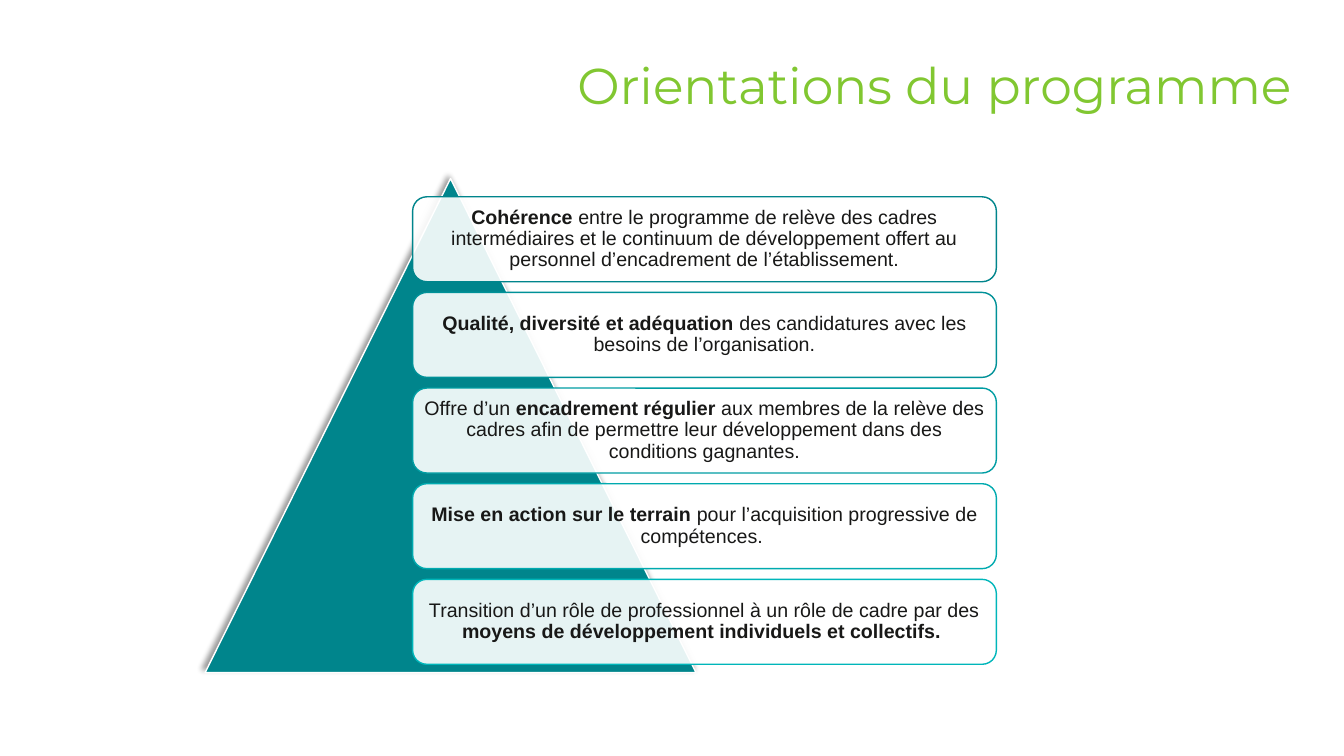
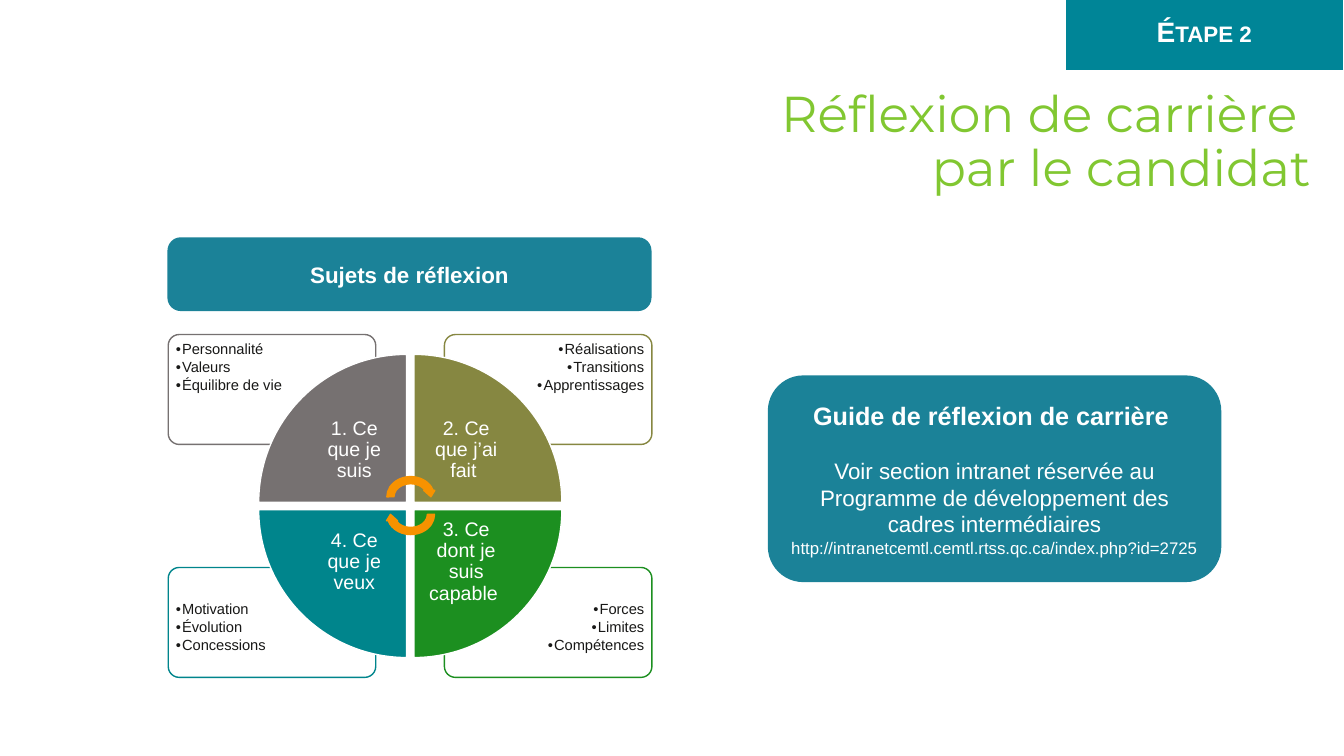
from dataclasses import dataclass

from lxml import etree
from pptx import Presentation
from pptx import util as u
from pptx.dml.color import RGBColor
from pptx.enum import shapes, text
from pptx.oxml import ns

Cm, Pt = u.Cm, u.Pt
SHAPE, ALIGN, ANCHOR = shapes.MSO_SHAPE, text.PP_ALIGN, text.MSO_ANCHOR


# Colours and type sizes
@dataclass(frozen=True)
class Theme:
    title_font: str = "Montserrat"
    body_font: str = "Arial"
    green: str = "81C731"
    ink: str = "181817"
    white: str = "FFFFFF"
    teal: str = "00858C"
    panel: str = "1B8298"
    band: str = "008597"
    grey: str = "767171"
    olive: str = "868741"
    leaf: str = "1C8F20"
    orange: str = "F79200"
    outlines: tuple = ("00858C", "009198", "009DA3", "00AAAF", "00B6BA")
    title_size: float = 36
    band_size: float = 20
    heading_size: float = 18
    panel_size: float = 16
    body_size: float = 14
    link_size: float = 12
    list_size: float = 10.5
    tight: float = 0.9


THEME = Theme()

ORIENTATIONS = (
    "**Cohérence** entre le programme de relève des cadres intermédiaires et le "
    "continuum de développement offert au personnel d’encadrement de l’établissement.",
    "**Qualité, diversité et adéquation **des candidatures avec les besoins de "
    "l’organisation.",
    "Offre d’un **encadrement régulier **aux membres de la relève des cadres afin de "
    "permettre leur développement dans des conditions gagnantes.",
    "**Mise en action sur le terrain **pour l’acquisition progressive de compétences. ",
    "Transition d’un rôle de professionnel à un rôle de cadre par des "
    "**moyens de développement individuels et collectifs. **",
)

# Column, row, rotation, colour, label, list items
QUADRANTS = (
    (0, 0, 0, THEME.grey, "1. Ce que je suis",
     ("Personnalité", "Valeurs", "Équilibre de vie")),
    (1, 0, 90, THEME.olive, "2. Ce que j’ai fait ",
     ("Réalisations", "Transitions", "Apprentissages")),
    (1, 1, 180, THEME.leaf, "3. Ce dont je suis capable ",
     ("Forces", "Limites", "Compétences")),
    (0, 1, 270, THEME.teal, "4. Ce que je veux",
     ("Motivation", "Évolution", "Concessions")),
)


# XML helpers
def add_xml(parent, tag, **attributes):
    return etree.SubElement(parent, ns.qn(tag), {k: str(v) for k, v in attributes.items()})


def set_alpha(shape, percent):
    colour = shape.fill._xPr.find(ns.qn("a:solidFill"))[0]
    add_xml(colour, "a:alpha", val=percent * 1000)


def add_shadow(shape):
    effects = shape._element.spPr.find(ns.qn("a:effectLst"))
    shadow = add_xml(effects, "a:outerShdw", blurRad=Pt(4), dist=Pt(3),
                     dir=225 * 60000, rotWithShape=0)
    colour = add_xml(shadow, "a:srgbClr", val="000000")
    add_xml(colour, "a:alpha", val=40000)


def add_bullet(para):
    properties = para._p.get_or_add_pPr()
    properties.set("marL", str(Cm(0.16)))
    properties.set("indent", str(-Cm(0.16)))
    add_xml(properties, "a:buFont", typeface=THEME.body_font)
    add_xml(properties, "a:buChar", char="•")


# Text
def write(para, markup, size, colour=THEME.white, bold=False, align=ALIGN.CENTER,
          spacing=None, before=None, after=None, bullet=False, small_caps=False):
    """Write a paragraph; ** toggles bold."""
    if bullet:
        add_bullet(para)
    para.alignment = align
    para.line_spacing = spacing
    para.space_before = before
    para.space_after = after
    for index, part in enumerate(markup.split("**")):
        if not part:
            continue
        span = para.add_run()
        span.text = part
        span.font.name = THEME.body_font
        span.font.size = Pt(size)
        span.font.bold = bold or index % 2 == 1
        span.font.color.rgb = RGBColor.from_string(colour)
        if small_caps:
            span._r.get_or_add_rPr().set("cap", "small")


def prepare_frame(box, inset=None, anchor=ANCHOR.MIDDLE):
    frame = box.text_frame
    frame.word_wrap = True
    frame.vertical_anchor = anchor
    if inset is not None:
        frame.margin_left = frame.margin_right = Cm(inset)
        frame.margin_top = frame.margin_bottom = Cm(inset)
    return frame


def next_paragraph(frame, index):
    return frame.add_paragraph() if index else frame.paragraphs[0]


# Elements
def add_shape(page, kind, area, fill, line, width=1, rotation=0):
    shape = page.shapes.add_shape(kind, *map(Cm, area))
    shape.shadow.inherit = False
    shape.fill.solid()
    shape.fill.fore_color.rgb = RGBColor.from_string(fill)
    shape.line.color.rgb = RGBColor.from_string(line)
    shape.line.width = Pt(width)
    shape.rotation = rotation
    return shape


def add_card(page, area, line):
    card = add_shape(page, SHAPE.ROUNDED_RECTANGLE, area, THEME.white, line)
    set_alpha(card, 90)
    return card


def add_panel(page, area):
    panel = add_shape(page, SHAPE.ROUNDED_RECTANGLE, area, THEME.panel, THEME.panel, 2.25)
    return prepare_frame(panel)


def add_list_card(page, area, line, items, align, top_inset):
    card = add_card(page, area, line)
    card.adjustments[0] = 0.1
    frame = prepare_frame(card, 0.11, ANCHOR.TOP)
    frame.margin_top = Cm(top_inset)
    for index, item in enumerate(items):
        write(next_paragraph(frame, index), item, THEME.list_size, THEME.ink,
              align=align, spacing=THEME.tight, after=Pt(1.6), bullet=True)


def add_band(page, label):
    band = add_shape(page, SHAPE.RECTANGLE, (26.83, -0.08, 7.04, 1.87),
                     THEME.band, THEME.white, 1.5)
    write(prepare_frame(band, 0.3).paragraphs[0], label, THEME.band_size, bold=True,
          spacing=THEME.tight, small_caps=True)


# Shared title style and pages
def style_titles(deck):
    level = deck.slide_master.element.xpath("p:txStyles/p:titleStyle/a:lvl1pPr")[0]
    level.set("algn", "r")
    for old in level.findall(ns.qn("a:lnSpc")):
        level.remove(old)
    spacing = add_xml(level, "a:lnSpc")
    add_xml(spacing, "a:spcPct", val=int(THEME.tight * 100000))
    level.insert(0, spacing)
    style = level.find(ns.qn("a:defRPr"))
    style.set("sz", str(THEME.title_size * 100))
    for child in list(style):
        style.remove(child)
    add_xml(add_xml(style, "a:solidFill"), "a:srgbClr", val=THEME.green)
    add_xml(style, "a:latin", typeface=THEME.title_font)


def add_page(deck, title, area):
    page = deck.slides.add_slide(deck.slide_layouts.get_by_name("Title Only"))
    box = page.shapes.title
    box.left, box.top, box.width, box.height = map(Cm, area)
    frame = prepare_frame(box)
    frame.auto_size = text.MSO_AUTO_SIZE.NONE
    frame.paragraphs[0].text = title
    return page


def build_orientations(deck):
    page = add_page(deck, "Orientations du programme", (6.18, 1, 26.62, 2.44))
    pyramid = add_shape(page, SHAPE.ISOSCELES_TRIANGLE, (5.17, 4.5, 12.37, 12.45),
                        THEME.teal, THEME.white)
    add_shadow(pyramid)
    for row, (markup, line) in enumerate(zip(ORIENTATIONS, THEME.outlines)):
        card = add_card(page, (10.4, 4.96 + 2.41 * row, 14.71, 2.14), line)
        write(prepare_frame(card, 0.15).paragraphs[0], markup, THEME.body_size,
              THEME.ink, spacing=THEME.tight)


def add_wheel(page):
    # Corner cards lie behind the wheel
    for column, row, _, colour, _, items in QUADRANTS:
        area = (4.24 + 6.96 * column, 8.43 + 5.87 * row, 5.23, 2.77)
        add_list_card(page, area, colour, items,
                      ALIGN.RIGHT if column else ALIGN.LEFT, 0.79 if row else 0.11)

    # Quarters, each with its label against the hub
    wedge, label_size, pitch = 3.73, 2.64, 3.91
    for column, row, rotation, colour, label, _ in QUADRANTS:
        left, top = 6.52 + pitch * column, 8.93 + pitch * row
        add_shape(page, SHAPE.PIE_WEDGE, (left, top, wedge, wedge), colour,
                  THEME.white, rotation=rotation)
        shift = wedge - label_size
        area = (left + shift * (1 - column), top + shift * (1 - row),
                label_size, label_size)
        box = page.shapes.add_textbox(*map(Cm, area))
        write(prepare_frame(box, 0.28).paragraphs[0], label, THEME.body_size,
              spacing=THEME.tight)

    # Turning arrows
    for top, rotation in ((11.96, 0), (12.4, 180)):
        arrow = add_shape(page, SHAPE.CIRCULAR_ARROW, (9.7, top, 1.3, 1.12),
                          THEME.orange, THEME.orange, rotation=rotation)
        arrow.adjustments[0] = 0.16


def build_reflection(deck):
    page = add_page(deck, "Réflexion de carrière \vpar le candidat",
                    (5.29, 1.77, 27.99, 3.68))
    add_wheel(page)

    # Guide panel
    guide = add_panel(page, (19.39, 9.5, 11.35, 5.13))
    write(guide.paragraphs[0], "Guide de réflexion de carrière ", THEME.heading_size,
          bold=True)
    write(guide.add_paragraph(), "Voir section intranet réservée au Programme de "
          "développement des cadres intermédiaires", THEME.panel_size, before=Pt(19))
    write(guide.add_paragraph(),
          "http://intranetcemtl.cemtl.rtss.qc.ca/index.php?id=2725", THEME.link_size)

    # Wheel heading and step band
    heading = add_panel(page, (4.26, 6.02, 12.12, 1.78))
    write(heading.paragraphs[0], "Sujets de réflexion", THEME.panel_size, bold=True)
    add_band(page, "Étape 2")


def main():
    deck = Presentation()
    deck.slide_width, deck.slide_height = Cm(33.87), Cm(19.05)
    style_titles(deck)
    build_orientations(deck)
    build_reflection(deck)
    deck.save("out.pptx")


if __name__ == "__main__":
    main()
